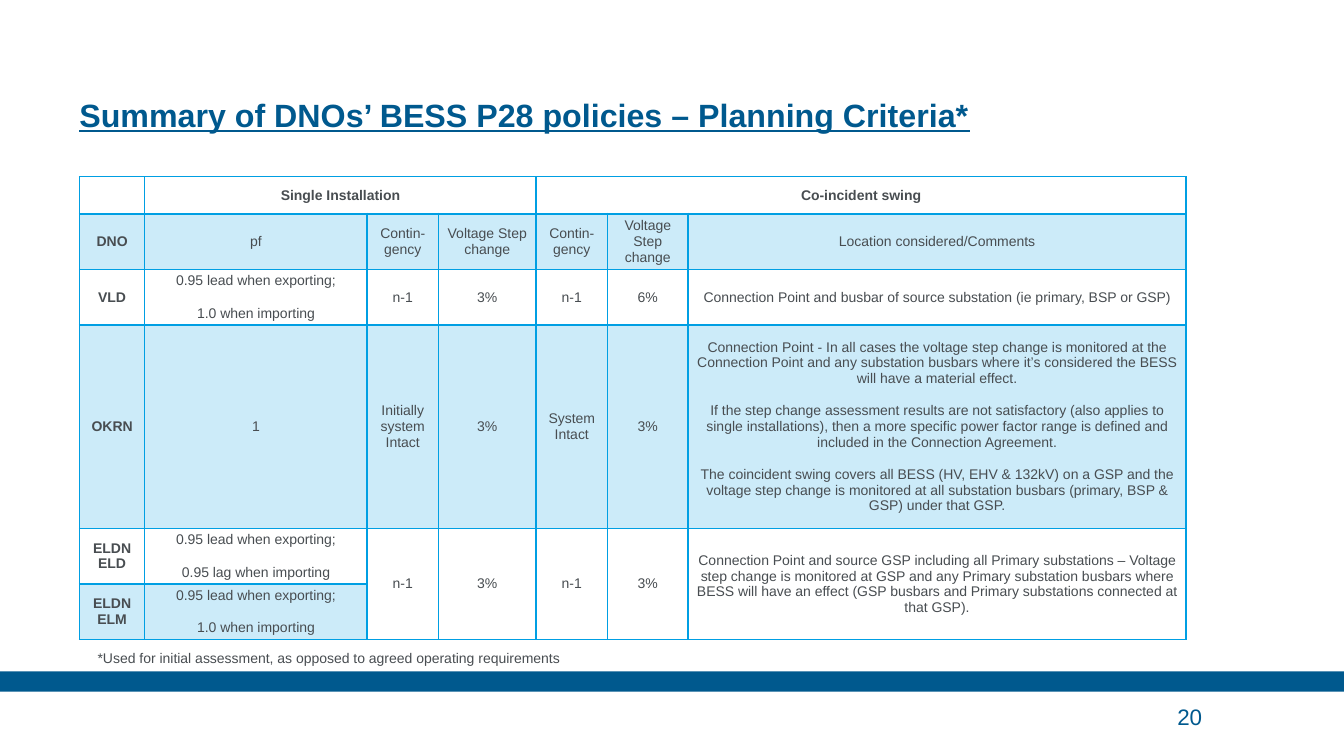
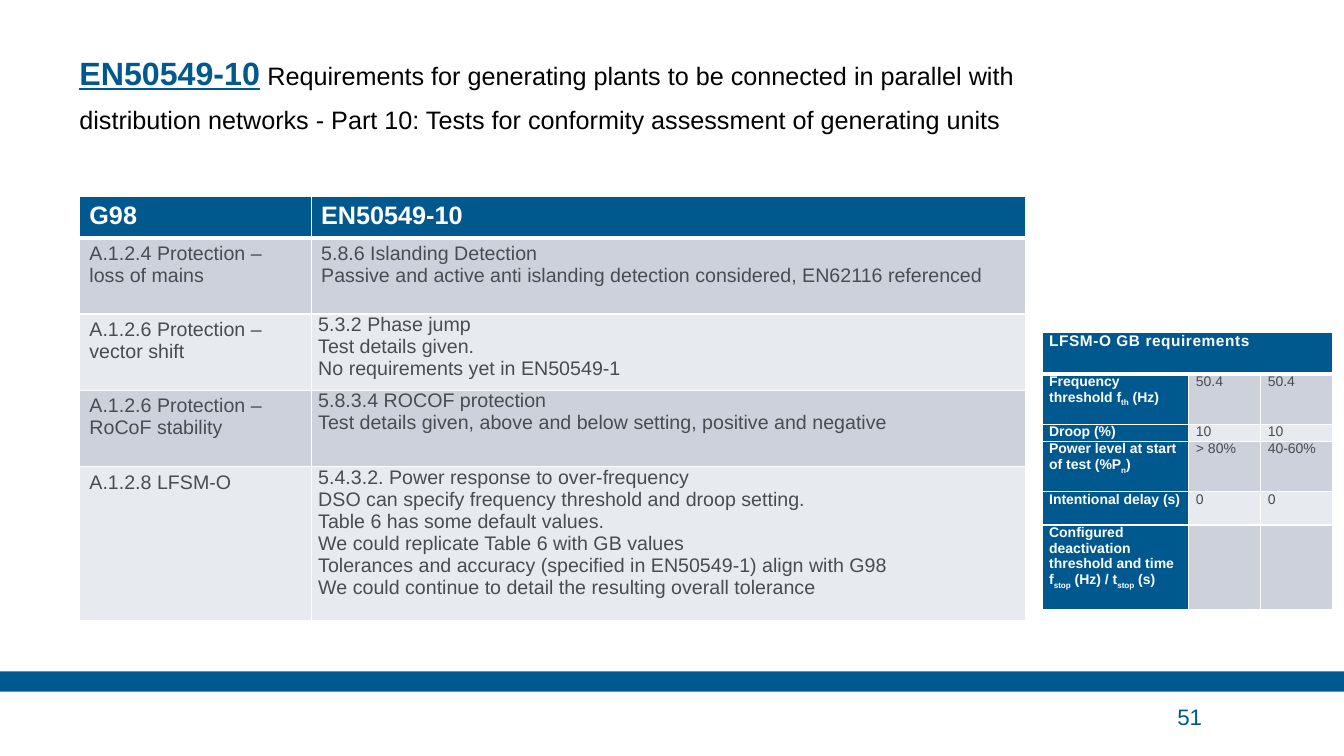
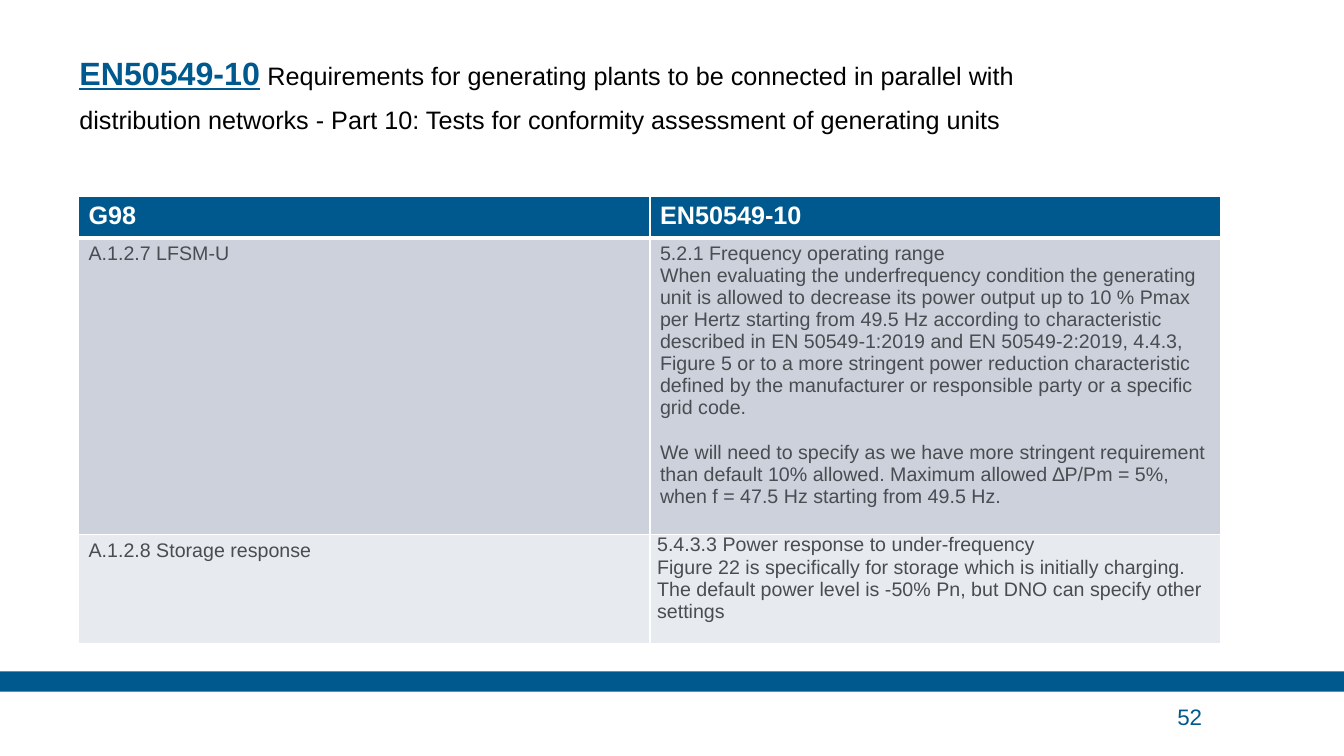
"""Build three slides on storage planning criteria and EN50549-10 conformity tests."""
from lxml.etree import SubElement
from pptx import Presentation
from pptx.dml.color import RGBColor
from pptx.enum.shapes import MSO_SHAPE
from pptx.enum.text import MSO_ANCHOR, PP_ALIGN
from pptx.oxml.ns import qn
from pptx.util import Cm, Pt

FONT = "Arial"
NAVY = RGBColor(0x00, 0x59, 0x8E)
CYAN = RGBColor(0x00, 0x9F, 0xE3)
GREY = RGBColor(0x48, 0x4D, 0x51)
MID = RGBColor(0xCC, 0xD1, 0xDB)
PALE = RGBColor(0xE7, 0xEA, 0xEE)
WHITE = RGBColor(0xFF, 0xFF, 0xFF)
BLACK = RGBColor(0x00, 0x00, 0x00)

STANDARD = "EN50549-10"
STANDARD_SCOPE = (
    " Requirements for generating plants to be connected in parallel with distribution networks"
    " - Part 10: Tests for conformity assessment of generating units"
)

POLICIES = [
    ("", "Single Installation", "", "", "Co-incident swing", "", ""),
    ("DNO", "pf", "Contin-gency", "Voltage Step change", "Contin-gency",
     "Voltage Step change", "Location considered/Comments"),
    ("VLD", "0.95 lead when exporting;\n1.0 when importing", "n-1", "3%", "n-1", "6%",
     "Connection Point and busbar of source substation (ie primary, BSP or GSP)"),
    ("OKRN", "1", "Initially system Intact", "3%", "System Intact", "3%",
     "Connection Point - In all cases the voltage step change is monitored at the Connection Point"
     " and any substation busbars where it’s considered the BESS will have a material effect.\n"
     "If the step change assessment results are not satisfactory (also applies to single"
     " installations), then a more specific power factor range is defined and included in the"
     " Connection Agreement.\n"
     "The coincident swing covers all BESS (HV, EHV & 132kV) on a GSP and the voltage step change"
     " is monitored at all substation busbars (primary, BSP & GSP) under that GSP."),
    ("ELDN ELD", "0.95 lead when exporting;\n0.95 lag when importing", "n-1", "3%", "n-1", "3%",
     "Connection Point and source GSP including all Primary substations – Voltage step change is"
     " monitored at GSP and any Primary substation busbars where BESS will have an effect (GSP"
     " busbars and Primary substations connected at that GSP)."),
    ("ELDN ELM", "0.95 lead when exporting;\n1.0 when importing", "", "", "", "", ""),
]

PROTECTION = [
    ("G98", STANDARD),
    ("A.1.2.4 Protection – loss of mains",
     "5.8.6 Islanding Detection\n"
     "Passive and active anti islanding detection considered, EN62116 referenced"),
    ("A.1.2.6 Protection – vector shift",
     "5.3.2 Phase jump\nTest details given.\nNo requirements yet in EN50549-1"),
    ("A.1.2.6 Protection – RoCoF stability",
     "5.8.3.4 ROCOF protection\n"
     "Test details given, above and below setting, positive and negative"),
    ("A.1.2.8 LFSM-O",
     "5.4.3.2. Power response to over-frequency\n"
     "DSO can specify frequency threshold and droop setting.\n"
     "Table 6 has some default values.\n"
     "We could replicate Table 6 with GB values\n"
     "Tolerances and accuracy (specified in EN50549-1) align with G98\n"
     "We could continue to detail the resulting overall tolerance"),
]

LFSM_O = [
    ("LFSM-O GB requirements", "", ""),
    ("Frequency threshold f|th| (Hz)", "50.4", "50.4"),
    ("Droop (%)", "10", "10"),
    ("Power level at start of test (%P|n|)", "> 80%", "40-60%"),
    ("Intentional delay (s)", "0", "0"),
    ("Configured deactivation threshold and time f|stop| (Hz) / t|stop| (s)", "", ""),
]

UNDER_FREQUENCY = [
    ("G98", STANDARD),
    ("A.1.2.7 LFSM-U",
     "5.2.1 Frequency operating range\n"
     "When evaluating the underfrequency condition the generating unit is allowed to decrease its"
     " power output up to 10 % Pmax per Hertz starting from 49.5 Hz according to characteristic"
     " described in EN 50549-1:2019 and EN 50549-2:2019, 4.4.3, Figure 5 or to a more stringent"
     " power reduction characteristic defined by the manufacturer or responsible party or a"
     " specific grid code.\n"
     "We will need to specify as we have more stringent requirement than default 10% allowed."
     " Maximum allowed ∆P/Pm = 5%, when f = 47.5 Hz starting from 49.5 Hz."),
    ("A.1.2.8 Storage response",
     "5.4.3.3 Power response to under-frequency\n"
     "Figure 22 is specifically for storage which is initially charging.\n"
     "The default power level is -50% Pn, but DNO can specify other settings"),
]


def set_font(font, size, color, bold=False, underline=None):
    """Set the typeface, size, colour and weight of a font."""
    font.name, font.size, font.bold, font.underline = FONT, Pt(size), bold, underline
    font.color.rgb = color


def add_text_box(slide, x, y, w, h, anchor=MSO_ANCHOR.MIDDLE, margins=(0, 0)):
    """Add a wrapping text box and return its text frame."""
    tf = slide.shapes.add_textbox(Cm(x), Cm(y), Cm(w), Cm(h)).text_frame
    tf.word_wrap, tf.vertical_anchor = True, anchor
    tf.margin_left = tf.margin_right = Cm(margins[0])
    tf.margin_top = tf.margin_bottom = Cm(margins[1])
    return tf


def add_line(tf, text, size, color):
    """Write one plain line in the first paragraph of a text frame."""
    p = tf.paragraphs[0]
    p.add_run().text = text
    set_font(p.font, size, color)


def add_page(prs, number, title, subtitle=""):
    """Add a slide with the title, the band and the page number."""
    slide = prs.slides.add_slide(prs.slide_layouts[6])
    band = slide.shapes.add_shape(MSO_SHAPE.RECTANGLE, 0, Cm(16.92), prs.slide_width, Cm(0.51))
    band.shadow.inherit = False
    band.fill.solid()
    band.fill.fore_color.rgb = NAVY
    band.line.fill.background()
    p = add_text_box(slide, 2, 0.79, 25, 2.59, MSO_ANCHOR.BOTTOM).paragraphs[0]
    p.line_spacing = Pt(30)
    r = p.add_run()
    r.text = title
    set_font(r.font, 23, NAVY, True, True)
    if subtitle:
        r = p.add_run()
        r.text = subtitle
        set_font(r.font, 18, BLACK, False, False)
    add_line(add_text_box(slide, 29.67, 17.55, 3.12, 0.99), str(number), 16, NAVY)
    return slide


def set_borders(cell, color, top, bottom):
    """Draw the four edges of a cell, the sides one point wide."""
    tc_pr = cell._tc.get_or_add_tcPr()
    for i, (side, width) in enumerate((("L", 1), ("R", 1), ("T", top), ("B", bottom))):
        ln = SubElement(tc_pr, qn(f"a:ln{side}"), w=str(Pt(width)))
        SubElement(SubElement(ln, qn("a:solidFill")), qn("a:srgbClr"), val=str(color))
        tc_pr.insert(i, ln)


def add_grid(slide, x, y, cols, rows, edge, header_edge, tight_from=(0, 0), merges=()):
    """Add a table with its sizes, merges, borders and cell margins."""
    table = slide.shapes.add_table(
        len(rows), len(cols), Cm(x), Cm(y), Cm(sum(cols)), Cm(sum(rows))).table
    for col, width in zip(table.columns, cols):
        col.width = Cm(width)
    for row, height in zip(table.rows, rows):
        row.height = Cm(height)
    for first, last in merges:
        table.cell(*first).merge(table.cell(*last))
    for i in range(len(rows)):
        for j in range(len(cols)):
            cell = table.cell(i, j)
            set_borders(cell, edge, header_edge if i == 1 else 1, header_edge if i == 0 else 1)
            if i >= tight_from[0] and j >= tight_from[1]:
                cell.margin_left = cell.margin_right = Cm(0.18)
                cell.margin_top = cell.margin_bottom = 0
    return table


def fill_cell(cell, color=None, alpha=None):
    """Fill a cell, with an opacity in percent if one is given."""
    if color is None:
        cell.fill.background()
        return
    cell.fill.solid()
    cell.fill.fore_color.rgb = color
    if alpha:
        clr = cell._tc.tcPr.find(qn("a:solidFill")).find(qn("a:srgbClr"))
        SubElement(clr, qn("a:alpha"), val=str(alpha * 1000))


def write_cell(cell, text, size, color, bold=False, align=PP_ALIGN.LEFT, gap=0):
    """Write one paragraph per line; parts between bars are subscripts."""
    tf = cell.text_frame
    for i, line in enumerate(text.split("\n")):
        p = tf.add_paragraph() if i else tf.paragraphs[0]
        p.alignment = align
        if i and gap:
            p.space_before = Pt(gap)
        for k, part in enumerate(line.split("|") if line else ()):
            r = p.add_run()
            r.text = part
            if k % 2:
                r._r.get_or_add_rPr().set("baseline", "-25000")
        set_font(p.font, size, color, bold)


def add_policy_table(slide):
    """Add the table of planning criteria by network operator."""
    merges = [((0, 1), (0, 3)), ((0, 4), (0, 6))] + [((4, j), (5, j)) for j in range(2, 7)]
    table = add_grid(slide, 2, 4.45, (1.65, 5.6, 1.8, 2.46, 1.8, 2.03, 12.55),
                     (0.94, 1.4, 1.4, 5.13, 1.4, 1.4), CYAN, 2, merges=merges)
    for i, row in enumerate(POLICIES):
        for j, text in enumerate(row):
            cell = table.cell(i, j)
            cell.vertical_anchor = MSO_ANCHOR.MIDDLE
            tinted = i % 2 and not cell.is_spanned
            fill_cell(cell, CYAN if tinted else None, 20)
            write_cell(cell, text, 10, GREY, i == 0 or j == 0, PP_ALIGN.CENTER, 12)


def add_comparison_table(slide, x, cols, rows, data):
    """Add a two-column comparison of G98 with the standard."""
    table = add_grid(slide, x, 4.95, cols, rows, WHITE, 3, tight_from=(2, 1))
    for i, row in enumerate(data):
        for j, text in enumerate(row):
            cell = table.cell(i, j)
            fill_cell(cell, NAVY if i == 0 else MID if i % 2 else PALE)
            write_cell(cell, text, 14 if i else 18, GREY if i else WHITE, i == 0)
    return table


def add_lfsm_table(slide):
    """Add the small table of LFSM-O requirements."""
    table = add_grid(slide, 26.26, 8.38, (3.7, 1.81, 1.81), (1.04, 1.27, 0.43, 1.27, 0.84, 2.13),
                     WHITE, 3, merges=[((0, 0), (0, 2))])
    for i, row in enumerate(LFSM_O):
        for j, text in enumerate(row):
            cell = table.cell(i, j)
            label = i == 0 or j == 0
            fill_cell(cell, NAVY if label else MID if i % 2 else PALE)
            write_cell(cell, text, 10 if i else 11, WHITE if label else GREY, label,
                       PP_ALIGN.LEFT if label else PP_ALIGN.JUSTIFY)
    heading = table.cell(0, 0).text_frame.paragraphs[0].runs[0]
    heading._r.get_or_add_rPr().set("spc", "40")


def main():
    """Build and save the presentation."""
    prs = Presentation()
    prs.slide_width, prs.slide_height = Cm(33.87), Cm(19.05)

    slide = add_page(prs, 20, "Summary of DNOs’ BESS P28 policies – Planning Criteria*")
    add_policy_table(slide)
    note = add_text_box(slide, 2.21, 16.23, 28.88, 0.69, MSO_ANCHOR.TOP, (0.25, 0.13))
    add_line(note, "*Used for initial assessment, as opposed to agreed operating requirements",
             10, GREY)

    slide = add_page(prs, 51, STANDARD, STANDARD_SCOPE)
    add_lfsm_table(slide)
    add_comparison_table(slide, 2, (5.84, 18), (1.04, 1.92, 1.92, 1.92, 3.9), PROTECTION)

    slide = add_page(prs, 52, STANDARD, STANDARD_SCOPE)
    table = add_comparison_table(slide, 1.98, (14.4, 14.38), (1.04, 7.47, 2.77), UNDER_FREQUENCY)
    table.cell(1, 1).text_frame.paragraphs[2].space_before = Pt(16)

    prs.save("out.pptx")


if __name__ == "__main__":
    main()
